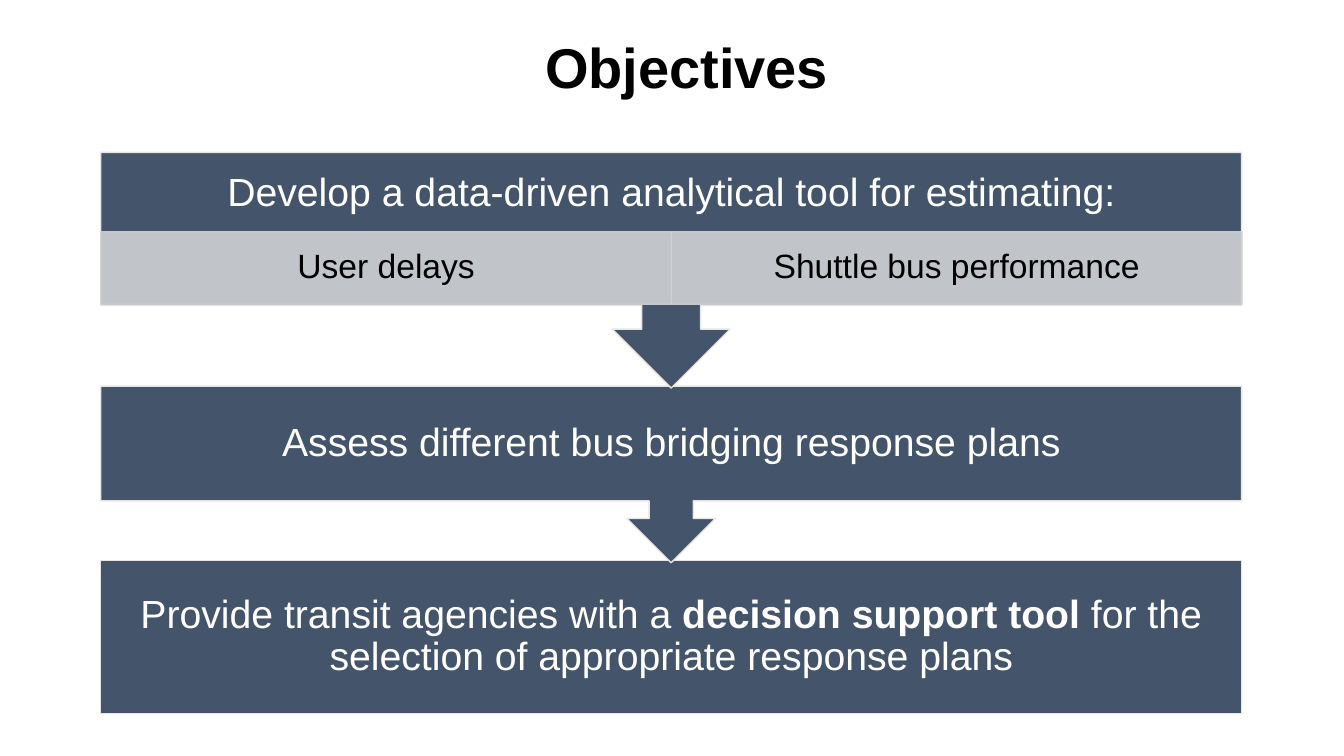
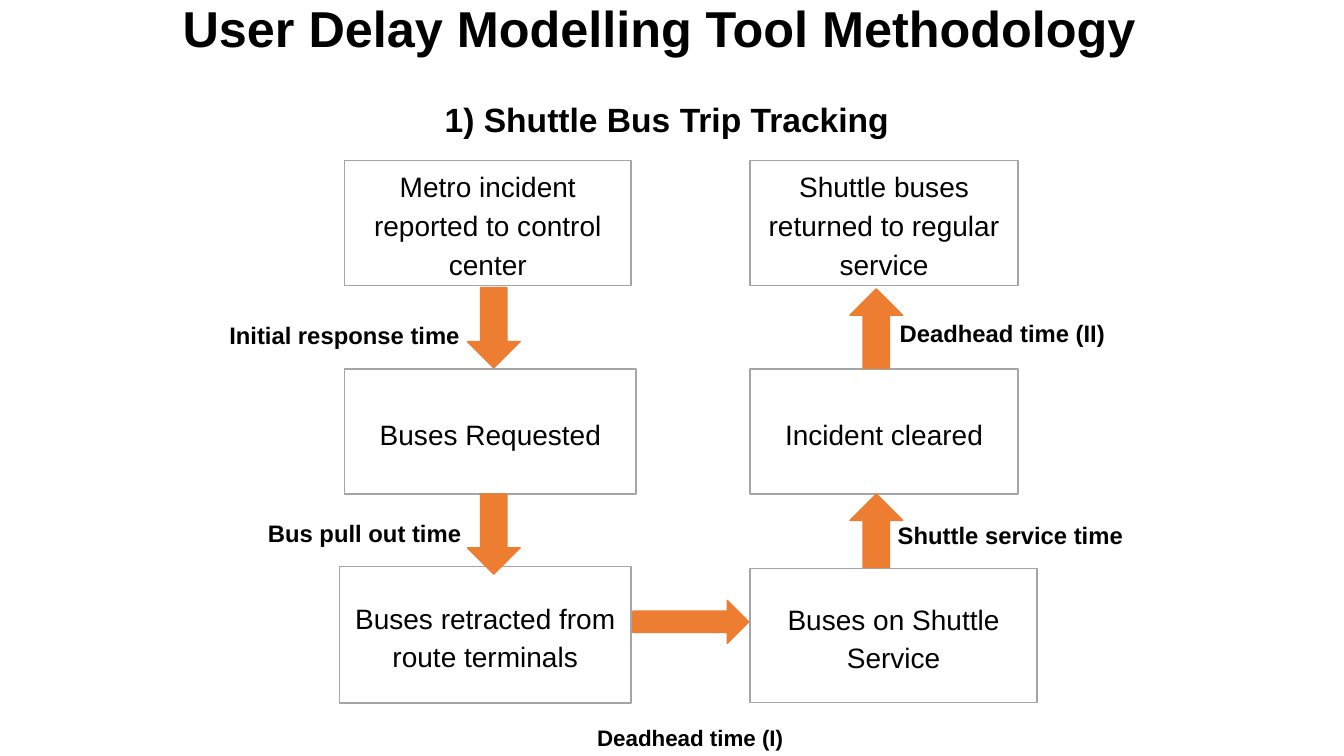
from lxml.etree import SubElement
from pptx import Presentation
from pptx.dml.color import RGBColor
from pptx.enum.shapes import MSO_SHAPE
from pptx.enum.text import MSO_ANCHOR, PP_ALIGN
from pptx.oxml.ns import qn
from pptx.util import Cm, Pt

FONT = "Arial"
BLACK = RGBColor(0x00, 0x00, 0x00)
WHITE = RGBColor(0xFF, 0xFF, 0xFF)
SLATE = RGBColor(0x44, 0x54, 0x6A)
PALE = RGBColor(0xE7, 0xE6, 0xE6)
SILVER = RGBColor(0xCF, 0xD1, 0xD4)
GREY = RGBColor(0xA5, 0xA5, 0xA5)
ORANGE = RGBColor(0xED, 0x7D, 0x31)

STEP_INSETS = (0.56, 0.56, 0.56, 0.56)
DETAIL_INSETS = (0.48, 0.08, 0.48, 0.08)
FLOW_INSETS = (0.18, 0.1, 0.18, 0.1)


def write(shape, runs, size, color=BLACK, bold=False, spacing=0.9,
          insets=(0.25, 0.13, 0.25, 0.13)):
    """Fill a shape with one centred paragraph; runs is a text or (text, bold) pairs."""
    tf = shape.text_frame
    tf.word_wrap = True
    tf.vertical_anchor = MSO_ANCHOR.MIDDLE
    tf.margin_left, tf.margin_top, tf.margin_right, tf.margin_bottom = map(Cm, insets)
    p = tf.paragraphs[0]
    p.alignment = PP_ALIGN.CENTER
    p.line_spacing = spacing
    if isinstance(runs, str):
        runs = [(runs, bold)]
    for text, is_bold in runs:
        r = p.add_run()
        r.text = text
        r.font.name = FONT
        r.font.size = Pt(size)
        r.font.bold = is_bold
        r.font.color.rgb = color


def add_label(s, text, box, size, **style):
    tb = s.shapes.add_textbox(*map(Cm, box))
    write(tb, text, size, bold=True, **style)


def add_block(s, kind, box, fill, line):
    sp = s.shapes.add_shape(kind, *map(Cm, box))
    sp.shadow.inherit = False
    sp.fill.solid()
    sp.fill.fore_color.rgb = fill
    sp.line.color.rgb = line
    sp.line.width = Pt(1)
    return sp


def set_opacity(sp, percent):
    """Apply the opacity to both fill and outline."""
    for color in sp._element.spPr.iter(qn("a:srgbClr")):
        SubElement(color, qn("a:alpha")).set("val", str(percent * 1000))


def add_step(s, kind, top, height, runs, insets=STEP_INSETS):
    sp = add_block(s, kind, (2.54, top, 28.75, height), SLATE, PALE)
    write(sp, runs, 28, WHITE, insets=insets)


def add_detail(s, left, text):
    sp = add_block(s, MSO_SHAPE.RECTANGLE, (left, 5.84, 14.38, 1.83), SILVER, SILVER)
    set_opacity(sp, 90)
    write(sp, text, 24, insets=DETAIL_INSETS)


def add_flow_box(s, text, box):
    sp = add_block(s, MSO_SHAPE.RECTANGLE, box, WHITE, GREY)
    write(sp, text, 20, spacing=1.15, insets=FLOW_INSETS)


def build_objectives(s):
    add_label(s, "Objectives", (4.67, 0.91, 25.27, 1.73), 40)
    add_step(s, MSO_SHAPE.RECTANGLE, 14.12, 3.86, [
        ("Provide transit agencies with a ", False),
        ("decision support tool ", True),
        ("for the selection of appropriate response plans", False)])
    add_step(s, MSO_SHAPE.DOWN_ARROW_CALLOUT, 9.73, 4.45,
             "Assess different bus bridging response plans")
    # The deep bottom inset keeps the text above the two detail cells
    add_step(s, MSO_SHAPE.DOWN_ARROW_CALLOUT, 3.84, 5.94,
             "Develop a data-driven analytical tool for estimating:",
             (0.56, 0.56, 0.56, 2.34))
    for i, text in enumerate(["User delays", "Shuttle bus performance"]):
        add_detail(s, 2.54 + i * 14.38, text)


def build_methodology(s):
    add_label(s, "User Delay Modelling Tool Methodology", (0.91, 0.05, 31.42, 1.47), 36)
    add_label(s, "1) Shuttle Bus Trip Tracking", (6.38, 2.42, 20.85, 1.3), 24)

    for text, box in [
        ("Metro incident reported to control center", (8.69, 4.04, 7.21, 3.15)),
        ("Shuttle buses returned to regular service", (18.9, 4.04, 6.76, 3.15)),
        ("Buses Requested", (8.69, 9.3, 7.34, 3.15)),
        ("Incident cleared", (18.9, 9.3, 6.76, 3.15)),
        ("Buses retracted from route terminals", (8.56, 14.27, 7.34, 3.45)),
        ("Buses on Shuttle Service", (18.9, 14.33, 7.24, 3.38)),
    ]:
        add_flow_box(s, text, box)

    for kind, box in [
        (MSO_SHAPE.DOWN_ARROW, (11.78, 7.25, 1.33, 2.02)),
        (MSO_SHAPE.DOWN_ARROW, (11.78, 12.45, 1.33, 2.02)),
        (MSO_SHAPE.RIGHT_ARROW, (15.95, 15.13, 2.92, 1.08)),
        (MSO_SHAPE.UP_ARROW, (21.42, 12.45, 1.33, 1.85)),
        (MSO_SHAPE.UP_ARROW, (21.42, 7.28, 1.33, 2)),
    ]:
        add_block(s, kind, box, ORANGE, ORANGE)

    for text, size, box in [
        ("Initial response time", 17, (5.13, 7.62, 7.11, 1.52)),
        ("Bus pull out time", 17, (5.99, 12.8, 6.4, 1.17)),
        ("Deadhead time (I)", 16, (14.45, 18.03, 5.89, 1)),
        ("Shuttle service time", 17, (22.33, 12.47, 6.27, 1.91)),
        ("Deadhead time (II)", 17, (22.3, 7.75, 5.92, 1.17)),
    ]:
        add_label(s, text, box, size, spacing=1.15, insets=FLOW_INSETS)


def main():
    prs = Presentation()
    prs.slide_width, prs.slide_height = Cm(33.87), Cm(19.05)
    for build in (build_objectives, build_methodology):
        build(prs.slides.add_slide(prs.slide_layouts[6]))
    prs.save("out.pptx")


if __name__ == "__main__":
    main()
